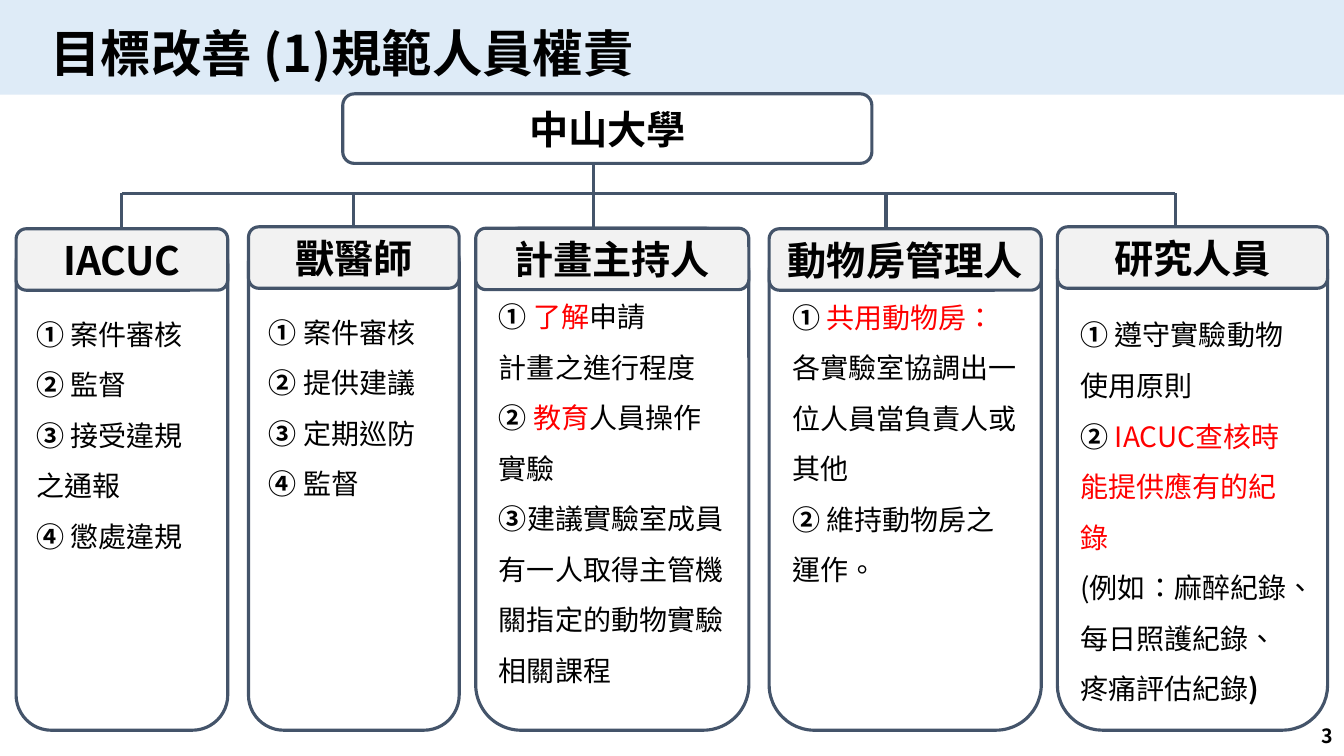
from dataclasses import dataclass

from lxml import etree
from pptx import Presentation
from pptx import util as u
from pptx.dml import color
from pptx.enum import shapes, text
from pptx.oxml import ns
from pptx.shapes.autoshape import Shape
from pptx.shapes.connector import Connector
from pptx.slide import Slide

FONT = "Noto Sans CJK SC"
COLORS = {
    "band": "DEEBF7",
    "outline": "44546A",
    "header": "F2F2F2",
    "white": "FFFFFF",
    "black": "000000",
    "red": "FF0000",
}
OUTLINE_WIDTH = 2.25
BUS_Y = 138.2
TRUNK_X = 424.1
HEADER_HEIGHT = 43.9
LIST_LINE_HEIGHT = 36.1


@dataclass(frozen=True)
class Box:
    left: float
    top: float
    width: float
    height: float


@dataclass(frozen=True)
class Piece:
    text: str
    color: str = "black"
    bold: bool = False
    size: float = 20


@dataclass(frozen=True)
class Role:
    name: str
    left: float
    top: float
    width: float
    drop_x: float
    list_inset: float
    duties: list[list[Piece]]


def number(mark: str) -> Piece:
    return Piece(mark, bold=True)


def red(words: str) -> Piece:
    return Piece(words, color="red")


ROOT = Box(244.8, 67, 378, 49.7)
ROLES = [
    Role("IACUC", 11.5, 163.4, 151.2, 87.1, 43.6, [
        [number("①"), Piece(" 案件審核")],
        [number("②"), Piece(" 監督")],
        [number("③"), Piece(" 接受違規之通報")],
        [number("④"), Piece(" 懲處違規")],
    ]),
    Role("獸醫師", 177.5, 162, 150.5, 252.75, 43.6, [
        [number("① "), Piece("案件審核")],
        [number("② "), Piece("提供建議")],
        [number("③ "), Piece("定期巡防")],
        [number("④"), Piece(" 監督")],
    ]),
    Role("計畫主持人", 339.8, 163, 195.1, TRUNK_X, 29.4, [
        [number("① "), red("了解"), Piece("申請")],
        [Piece("計畫之進行程度")],
        [number("② "), red("教育"), Piece("人員操作實驗")],
        [number("③"), Piece("建議實驗室成員有一人取得主管機關指定的動物實驗相關課程")],
    ]),
    Role("動物房管理人", 549.4, 163.4, 194.4, 632.9, 29.4, [
        [number("① "), red("共用動物房：")],
        [Piece("各實驗室協調出一位人員當負責人或其他")],
        [number("②"), Piece(" 維持動物房之運作。")],
    ]),
    Role("研究人員", 755.3, 162, 193, 839.5, 43.6, [
        [number("①"), Piece(" 遵守實驗動物使用原則")],
        [number("② "), red("IACUC查核時能提供應有的紀錄")],
        [Piece("(例如：麻醉紀錄、每日照護紀錄、疼痛評估紀錄"), number(")")],
    ]),
]
BODY_BOTTOM = 521.6


def rgb(name: str) -> color.RGBColor:
    return color.RGBColor.from_string(COLORS[name])


def place(shape: Shape, box: Box) -> None:
    for name in ("left", "top", "width", "height"):
        setattr(shape, name, u.Pt(getattr(box, name)))


def write(
    shape: Shape,
    paragraphs: list[list[Piece]],
    frame_format: dict,
    paragraph_format: dict,
) -> None:
    frame = shape.text_frame
    frame_values = {"word_wrap": True, "auto_size": text.MSO_AUTO_SIZE.NONE}
    for name, value in (frame_values | frame_format).items():
        setattr(frame, name, value)
    for index, pieces in enumerate(paragraphs):
        paragraph = frame.add_paragraph() if index else frame.paragraphs[0]
        for name, value in paragraph_format.items():
            setattr(paragraph, name, value)
        for piece in pieces:
            run = paragraph.add_run()
            run.text = piece.text
            font_values = {"name": FONT, "size": u.Pt(piece.size), "bold": piece.bold}
            for name, value in font_values.items():
                setattr(run.font, name, value)
            run.font.color.rgb = rgb(piece.color)
            properties = run._r.get_or_add_rPr()
            properties.set("lang", "zh-TW")
            etree.SubElement(properties, ns.qn("a:ea"), typeface=FONT)


def add_panel(slide: Slide, kind: shapes.MSO_SHAPE, box: Box, fill: str, outlined: bool = True) -> Shape:
    shape = slide.shapes.add_shape(kind, 0, 0, 0, 0)
    place(shape, box)
    shape.shadow.inherit = False
    shape.fill.solid()
    shape.fill.fore_color.rgb = rgb(fill)
    if outlined:
        shape.line.color.rgb = rgb("outline")
        shape.line.width = u.Pt(OUTLINE_WIDTH)
    else:
        shape.line.fill.background()
    return shape


def add_line(slide: Slide, x1: float, y1: float, x2: float, y2: float) -> Connector:
    connector = slide.shapes.add_connector(
        shapes.MSO_CONNECTOR.STRAIGHT, u.Pt(x1), u.Pt(y1), u.Pt(x2), u.Pt(y2)
    )
    connector.line.color.rgb = rgb("outline")
    connector.line.width = u.Pt(OUTLINE_WIDTH)
    etree.SubElement(connector.element.spPr, ns.qn("a:effectLst"))
    return connector


def add_heading(slide: Slide, box: Box, fill: str, words: str) -> Shape:
    shape = add_panel(slide, shapes.MSO_SHAPE.ROUNDED_RECTANGLE, box, fill)
    write(
        shape,
        [[Piece(words, bold=True, size=28)]],
        {"vertical_anchor": text.MSO_ANCHOR.MIDDLE, "margin_top": 0, "margin_bottom": 0},
        {"alignment": text.PP_ALIGN.CENTER},
    )
    return shape


def add_role(slide: Slide, role: Role) -> None:
    box = Box(role.left, role.top, role.width, BODY_BOTTOM - role.top)
    body = add_panel(slide, shapes.MSO_SHAPE.ROUNDED_RECTANGLE, box, "white")
    write(
        body,
        role.duties,
        {"vertical_anchor": text.MSO_ANCHOR.TOP, "margin_top": u.Pt(role.list_inset)},
        {"alignment": text.PP_ALIGN.LEFT, "line_spacing": u.Pt(LIST_LINE_HEIGHT)},
    )
    header_box = Box(role.left, role.top, role.width, HEADER_HEIGHT)
    header = add_heading(slide, header_box, "header", role.name)
    drop = add_line(slide, role.drop_x, BUS_Y, role.drop_x, role.top)
    if abs(role.drop_x - role.left - role.width / 2) < 0.5:
        drop.end_connect(header, 0)


def main() -> None:
    presentation = Presentation()
    presentation.slide_width = u.Pt(960)
    presentation.slide_height = u.Pt(540)
    slide = presentation.slides.add_slide(presentation.slide_layouts[5])

    band = add_panel(slide, shapes.MSO_SHAPE.RECTANGLE, Box(0, 0, 960, 67.7), "band", False)
    title = slide.shapes.title
    band.element.addnext(title.element)
    place(title, Box(28.8, 12.2, 560.2, 55.4))
    write(
        title,
        [[Piece("目標改善 (1)規範人員權責", bold=True, size=36)]],
        {"vertical_anchor": text.MSO_ANCHOR.MIDDLE},
        {"alignment": text.PP_ALIGN.LEFT, "line_spacing": 0.9},
    )

    add_heading(slide, ROOT, "white", "中山大學")
    add_line(slide, TRUNK_X, ROOT.top + ROOT.height, TRUNK_X, BUS_Y)
    add_line(slide, ROLES[0].drop_x, BUS_Y, ROLES[-1].drop_x, BUS_Y)
    for role in ROLES:
        add_role(slide, role)

    page_number = slide.shapes.add_textbox(0, 0, 0, 0)
    place(page_number, Box(743, 511.2, 216, 28.8))
    write(
        page_number,
        [[Piece("3", bold=True, size=14)]],
        {"vertical_anchor": text.MSO_ANCHOR.MIDDLE},
        {"alignment": text.PP_ALIGN.RIGHT},
    )
    presentation.save("out.pptx")


if __name__ == "__main__":
    main()
